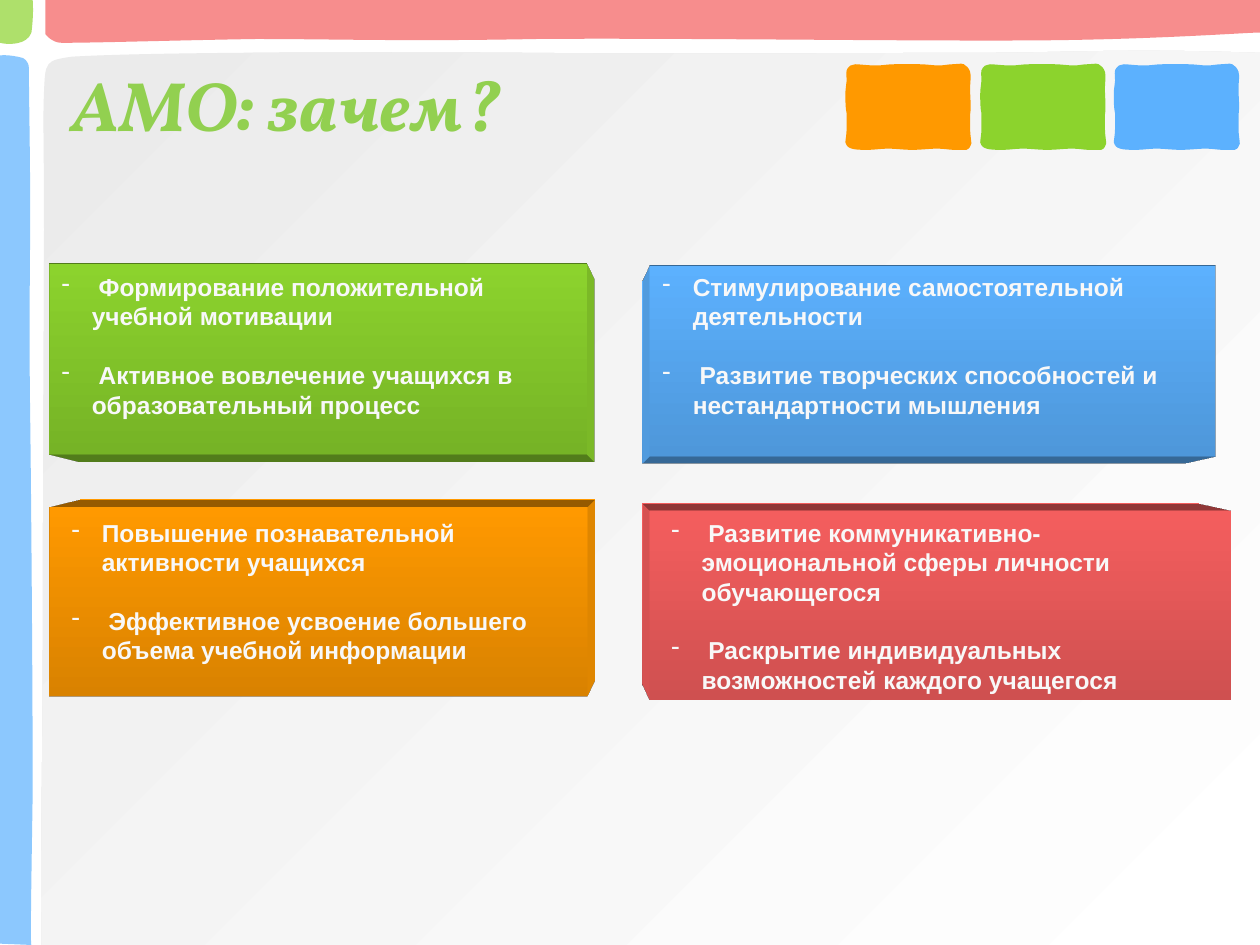
from lxml.etree import SubElement
from pptx import Presentation
from pptx.dml.color import RGBColor
from pptx.enum.shapes import MSO_SHAPE as SHAPE
from pptx.enum.text import MSO_ANCHOR as ANCHOR, PP_ALIGN as ALIGN
from pptx.oxml.ns import qn
from pptx.util import Inches, Pt

GREEN, BLUE, ORANGE, RED = "8CD32D", "5CB1FE", "FF9900", "F45E5E"


def paint(sp, *colors, angle=270, alpha=None):
    sp.shadow.inherit = False
    sp.line.fill.background()
    if len(colors) == 1:
        sp.fill.solid()
        sp.fill.fore_color.rgb = RGBColor.from_string(colors[0])
    else:
        sp.fill.gradient()
        sp.fill.gradient_angle = angle
        for stop, c in zip(sp.fill.gradient_stops, colors):
            stop.color.rgb = RGBColor.from_string(c)
    if alpha:
        clr = next(sp._element.spPr.iter(qn("a:srgbClr")))
        SubElement(clr, qn("a:alpha"), val=str(alpha * 1000))


def outline(segments, dx=0, dy=0):
    ends = [(Inches(seg[-2] + dx), Inches(seg[-1] + dy)) for seg in segments]
    fb = s.shapes.build_freeform(*ends[0], scale=1.0)
    fb.add_line_segments(ends[1:], close=True)
    sp = fb.convert_to_shape()
    lines = list(sp._element.spPr.iter(qn("a:lnTo")))
    for seg, line in zip(segments[1:], lines):
        if len(seg) == 6:
            line.tag = qn("a:cubicBezTo")
            line.clear()
            for x, y in zip(seg[::2], seg[1::2]):
                SubElement(line, qn("a:pt"), x=str(Inches(x + dx) - sp.left), y=str(Inches(y + dy) - sp.top))
    return sp


prs = Presentation()
prs.slide_width, prs.slide_height = Inches(10), Inches(7.5)
s = prs.slides.add_slide(prs.slide_layouts[5])

panel = [(10, 7.5), (10, 0.42), (8.86, 0.38, 8.55, 0.42, 7.6, 0.42), (6.66, 0.42, 5.5, 0.43, 4.33, 0.42),
         (3.16, 0.41, 1.23, 0.41, 0.57, 0.45), (0.36, 0.48, 0.36, 0.49, 0.35, 0.73),
         (0.34, 0.96, 0.35, 1.1, 0.35, 1.82), (0.35, 2.56, 0.34, 4.12, 0.34, 5.06),
         (0.34, 6.01, 0.32, 6.62, 0.33, 7.5)]
paint(outline(panel), "EBEBEB", "FFFFFF", angle=315)

top_band = [(10, 0), (10, 0.26), (10.01, 0.25, 9.28, 0.31, 8.32, 0.32), (7.36, 0.33, 5.31, 0.3, 4.26, 0.31),
            (3.21, 0.33, 2.65, 0.31, 2.03, 0.31), (1.4, 0.32, 0.77, 0.34, 0.49, 0.34),
            (0.41, 0.34, 0.36, 0.27, 0.36, 0.27), (0.36, 0)]
left_band = [(0, 7.49), (0.25, 7.5), (0.24, 7.51, 0.25, 6.98, 0.26, 6.28), (0.26, 5.58, 0.25, 4.07, 0.24, 3.3),
             (0.23, 2.54, 0.24, 2.12, 0.24, 1.67), (0.24, 1.21, 0.23, 0.75, 0.23, 0.54),
             (0.23, 0.48, 0.18, 0.46, 0.18, 0.46), (0.07, 0.43, 0, 0.44, 0, 0.44)]
corner = [(0, 0), (0.26, 0), (0.27, 0.12, 0.25, 0.26, 0.25, 0.26), (0.23, 0.31, 0.19, 0.33, 0.15, 0.34),
          (0.07, 0.36, 0, 0.34, 0, 0.34)]
for segments, color in ((top_band, RED), (left_band, BLUE), (corner, GREEN)):
    paint(outline(segments), color, alpha=70)

tile = [(0.02, 0.04), (0.03, 0.02, 0.04, 0.02, 0.08, 0.01), (0.11, 0.01, 0.18, 0.02, 0.24, 0.02),
        (0.3, 0.02, 0.33, 0.01, 0.39, 0.01), (0.46, 0.01, 0.54, 0.01, 0.59, 0.01),
        (0.64, 0.01, 0.7, 0.02, 0.74, 0.02), (0.78, 0.02, 0.82, 0.01, 0.85, 0.01),
        (0.88, 0.01, 0.92, 0, 0.94, 0.01), (0.96, 0.02, 0.98, 0.04, 0.99, 0.07),
        (1, 0.11, 0.99, 0.14, 0.99, 0.21), (0.99, 0.27, 1, 0.35, 0.99, 0.41),
        (0.99, 0.46, 0.99, 0.48, 0.99, 0.52), (0.99, 0.57, 1, 0.62, 1, 0.64),
        (0.99, 0.66, 0.99, 0.68, 0.96, 0.69), (0.94, 0.69, 0.89, 0.69, 0.86, 0.69),
        (0.83, 0.69, 0.78, 0.68, 0.73, 0.68), (0.67, 0.68, 0.6, 0.69, 0.53, 0.69),
        (0.47, 0.69, 0.39, 0.68, 0.34, 0.68), (0.28, 0.68, 0.23, 0.69, 0.18, 0.69),
        (0.13, 0.69, 0.08, 0.69, 0.05, 0.68), (0.02, 0.67, 0.01, 0.66, 0, 0.63),
        (0, 0.61, 0.01, 0.57, 0.01, 0.52), (0.01, 0.47, 0.01, 0.45, 0.01, 0.4),
        (0, 0.36, 0, 0.3, 0, 0.25), (0, 0.19, 0.01, 0.17, 0.01, 0.14), (0.01, 0.1, 0, 0.06, 0.02, 0.04)]
for x, color in ((6.71, ORANGE), (8.84, BLUE), (7.78, GREEN)):
    paint(outline(tile, x, 0.5), color)

title = s.shapes.title
s.shapes._spTree.append(title._element)
title.left, title.top, title.width, title.height = map(Inches, (0.47, 0.31, 6.36, 1.03))
title.text_frame.text = "АМО: зачем?"
title.text_frame.vertical_anchor = ANCHOR.MIDDLE
p = title.text_frame.paragraphs[0]
p.alignment = ALIGN.LEFT
for name, value in {"name": "Vollkorn", "size": Pt(40), "bold": True, "italic": True}.items():
    setattr(p.runs[0].font, name, value)
p.runs[0].font.color.rgb = RGBColor.from_string("92D050")

cards = [
    ((0.39, 2.09, 4.27, 1.51), "BottomRight", "t", (GREEN, "76B326")),
    ((5.16, 2.11, 4.49, 1.51), "BottomLeft", "t", (BLUE, "4E97DA")),
    ((0.39, 4.03, 4.27, 1.5), "TopRight", "b", (ORANGE, "D98200")),
    ((5.16, 4.06, 4.61, 1.49), "TopLeft", "b", (RED, "CF5050")),
]
for box, view, light, colors in cards:
    sp = s.shapes.add_shape(SHAPE.RECTANGLE, *map(Inches, box))
    paint(sp, *colors)
    spPr = sp._element.spPr
    scene = SubElement(spPr, qn("a:scene3d"))
    SubElement(scene, qn("a:camera"), prst="legacyPerspective" + view)
    SubElement(scene, qn("a:lightRig"), rig="legacyFlat3", dir=light)
    solid = SubElement(spPr, qn("a:sp3d"), extrusionH="430200", prstMaterial="legacyMatte")
    for bevel in ("a:bevelT", "a:bevelB"):
        SubElement(solid, qn(bevel), w="13500", h="13500", prst="angle")
    SubElement(SubElement(solid, qn("a:extrusionClr")), qn("a:srgbClr"), val=colors[0])

notes = [
    ((0.47, 4.06, 4.06, 1.75),
     ("Повышение познавательной активности учащихся",
      " Эффективное усвоение большего объема учебной информации")),
    ((0.39, 2.11, 4.14, 1.28),
     (" Формирование положительной учебной мотивации",
      " Активное вовлечение учащихся в образовательный процесс")),
    ((5.16, 2.11, 4.14, 1.28),
     ("Стимулирование самостоятельной деятельности",
      " Развитие творческих способностей и нестандартности мышления")),
    ((5.23, 4.06, 4.38, 1.75),
     (" Развитие коммуникативно- эмоциональной сферы личности обучающегося",
      " Раскрытие индивидуальных возможностей каждого учащегося")),
]
for box, items in notes:
    tf = s.shapes.add_textbox(*map(Inches, box)).text_frame
    tf.word_wrap = True
    for i, item in enumerate(items):
        p = tf.paragraphs[0] if i == 0 else tf.add_paragraph()
        pPr = p._p.get_or_add_pPr()
        pPr.set("marL", str(Inches(0.24)))
        pPr.set("indent", str(-Inches(0.24)))
        SubElement(pPr, qn("a:buChar"), char="-")
        if i:
            p.space_before = Pt(16.8)
        r = p.add_run()
        r.text = item
        for name, value in {"name": "Arial", "size": Pt(14), "bold": True}.items():
            setattr(r.font, name, value)
        r.font.color.rgb = RGBColor.from_string("F8F8F8")

prs.save("out.pptx")
